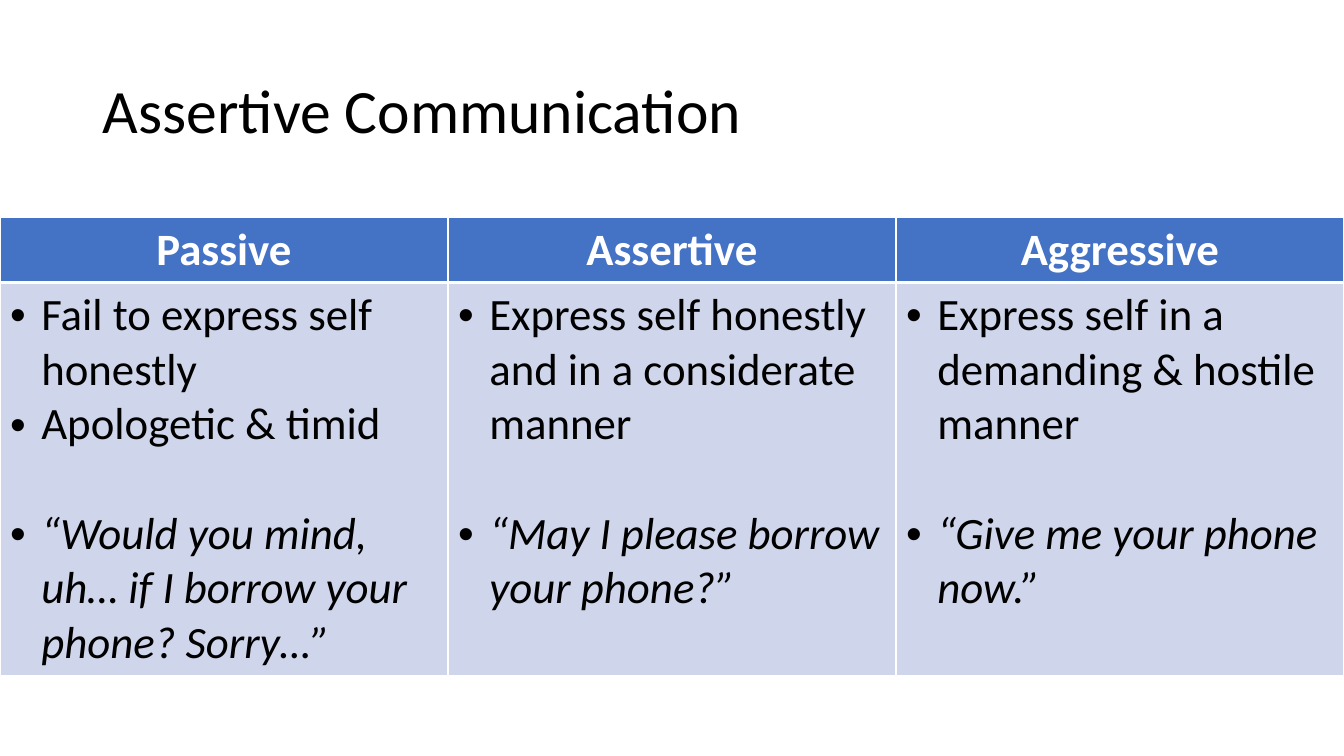
from dataclasses import dataclass

from lxml import etree
from pptx import Presentation
from pptx.dml.color import RGBColor
from pptx.enum.text import MSO_ANCHOR, MSO_AUTO_SIZE, PP_ALIGN
from pptx.oxml.ns import qn
from pptx.util import Inches, Pt

LEFT, CENTER = PP_ALIGN.LEFT, PP_ALIGN.CENTER
MIDDLE = MSO_ANCHOR.MIDDLE
NO_AUTOFIT = MSO_AUTO_SIZE.NONE
TITLE_ONLY = 5


@dataclass(frozen=True)
class Theme:
    font: str = "Calibri"
    title_size: int = 44
    table_size: int = 32
    quote_gap: int = 39
    text: str = "000000"
    white: str = "FFFFFF"
    header: str = "4472C4"
    body: str = "CFD5EA"


THEME = Theme()

STYLES = [
    ("Passive",
     ["Fail to express self honestly", "Apologetic & timid"],
     "“Would you mind, uh… if I borrow your phone? Sorry…”"),
    ("Assertive",
     ["Express self honestly and in a considerate manner"],
     "“May I please borrow your phone?”"),
    ("Aggressive",
     ["Express self in a demanding & hostile manner"],
     "“Give me your phone now.”"),
]


def add_run(p, text, size, color, bold=False, italic=False):
    r = p.add_run()
    r.text = text
    r.font.name = THEME.font
    r.font.size = Pt(size)
    r.font.color.rgb = RGBColor.from_string(color)
    r.font.bold = bold
    r.font.italic = italic


def add_title(s, text):
    sp = s.shapes.title
    sp.left, sp.top = Inches(0.92), Inches(0.4)
    sp.width, sp.height = Inches(11.5), Inches(1.45)
    tf = sp.text_frame
    tf.auto_size = NO_AUTOFIT
    tf.word_wrap = True
    tf.vertical_anchor = MIDDLE
    p = tf.paragraphs[0]
    p.alignment = LEFT
    p.line_spacing = 0.9
    add_run(p, text, THEME.title_size, THEME.text)


def style_cell(cell, color, **widths):
    tcPr = cell._tc.get_or_add_tcPr()
    for side in "LRTB":
        ln = etree.SubElement(tcPr, qn(f"a:ln{side}"), w=str(Pt(widths.get(side, 1))))
        fill = etree.SubElement(ln, qn("a:solidFill"))
        etree.SubElement(fill, qn("a:srgbClr"), val=THEME.white)
    cell.fill.solid()
    cell.fill.fore_color.rgb = RGBColor.from_string(color)


def add_bullet(p):
    pPr = p._p.get_or_add_pPr()
    pPr.set("marL", str(Inches(0.31)))
    pPr.set("indent", str(Inches(-0.31)))
    etree.SubElement(pPr, qn("a:buFont"), typeface="Arial")
    etree.SubElement(pPr, qn("a:buChar"), char="•")


def fill_header(cell, heading):
    style_cell(cell, THEME.header, B=3)
    p = cell.text_frame.paragraphs[0]
    p.alignment = CENTER
    add_run(p, heading, THEME.table_size, THEME.white, bold=True)


def fill_body(cell, traits, quote):
    style_cell(cell, THEME.body, T=3)
    tf = cell.text_frame
    for i, text in enumerate([*traits, quote]):
        is_quote = i == len(traits)
        p = tf.add_paragraph() if i else tf.paragraphs[0]
        if is_quote:
            p.space_before = Pt(THEME.quote_gap)
        add_bullet(p)
        add_run(p, text, THEME.table_size, THEME.text, italic=is_quote)


def add_style_table(s, styles, width):
    table = s.shapes.add_table(
        2, len(styles), 0, Inches(2.16), width, Inches(4.54)).table
    table.rows[0].height = Inches(0.64)
    table.rows[1].height = Inches(3.9)
    for col, (heading, traits, quote) in enumerate(styles):
        fill_header(table.cell(0, col), heading)
        fill_body(table.cell(1, col), traits, quote)


def main():
    prs = Presentation()
    prs.slide_width, prs.slide_height = Inches(13.33), Inches(7.5)
    s = prs.slides.add_slide(prs.slide_layouts[TITLE_ONLY])
    add_title(s, "Assertive Communication")
    add_style_table(s, STYLES, prs.slide_width)
    prs.save("out.pptx")


if __name__ == "__main__":
    main()
